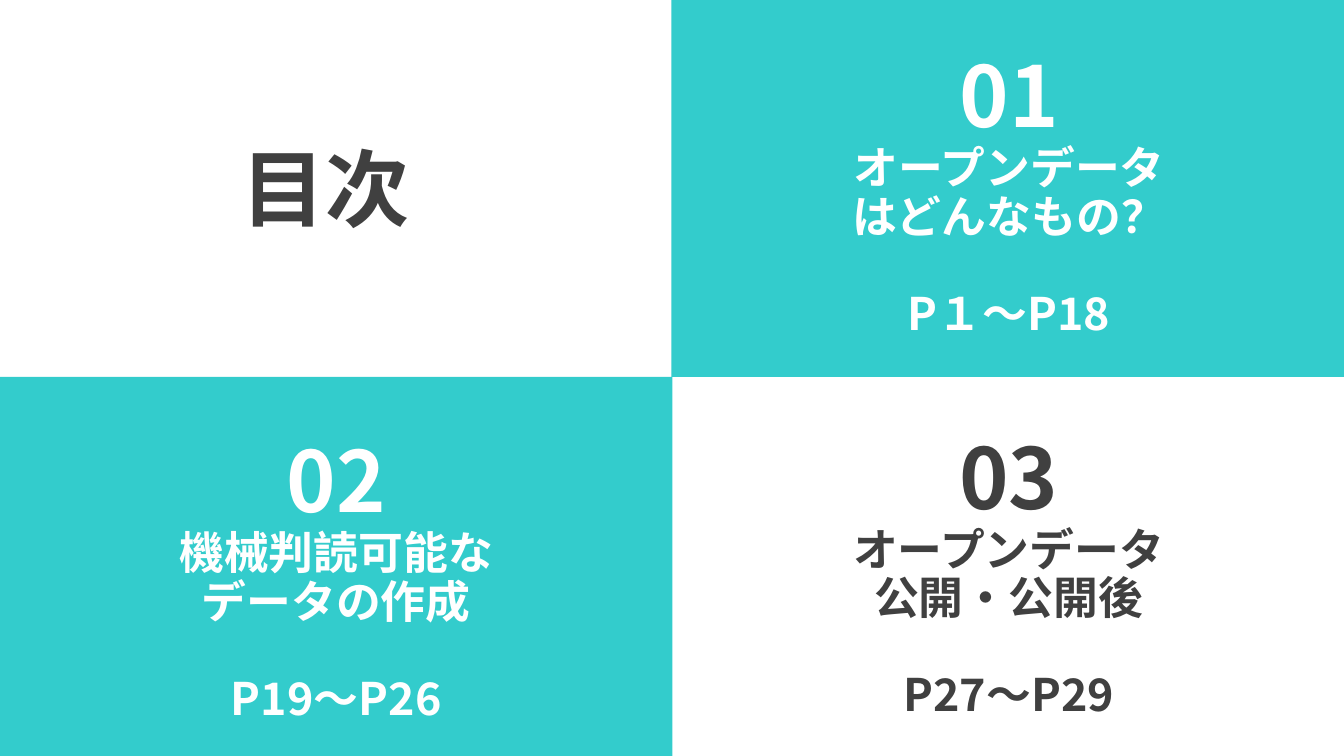
from dataclasses import dataclass

from lxml.etree import SubElement
from pptx import Presentation
from pptx.dml.color import RGBColor
from pptx.enum.shapes import MSO_SHAPE
from pptx.enum.text import MSO_ANCHOR, PP_ALIGN
from pptx.oxml.ns import qn
from pptx.util import Inches, Pt


@dataclass(frozen=True)
class Theme:
    """Colours, font and type sizes of the contents slide."""

    teal: str = "33CCCC"
    white: str = "FFFFFF"
    dark: str = "404040"
    font: str = "Noto Sans CJK JP"
    large: int = 60
    body: int = 32
    line_spacing: float = 0.9
    page_gap: float = 34.6


def write_paragraph(paragraph, text, *, theme, size, color, space_before=0):
    """Write centred bold text into a paragraph."""
    paragraph.alignment = PP_ALIGN.CENTER
    paragraph.line_spacing = theme.line_spacing
    paragraph.space_before = Pt(space_before)
    run = paragraph.add_run()
    run.text = text
    run.font.size = Pt(size)
    run.font.bold = True
    run.font.color.rgb = RGBColor.from_string(color)
    run.font.name = theme.font
    SubElement(run.font._element, qn("a:ea"), typeface=theme.font)


class ContentsSlide:
    """Draws panels and text blocks on one slide in one theme."""

    def __init__(self, slide, theme):
        """Keep the slide and its theme."""
        self.slide = slide
        self.theme = theme

    def panel(self, left, top, width, height):
        """Add a teal quarter panel."""
        shape = self.slide.shapes.add_shape(
            MSO_SHAPE.RECTANGLE, Inches(left), Inches(top), Inches(width), Inches(height)
        )
        shape.shadow.inherit = False
        shape.fill.solid()
        shape.fill.fore_color.rgb = RGBColor.from_string(self.theme.teal)
        shape.line.fill.background()

    def text_frame(self, left, top, width, height):
        """Add a wrapping, vertically centred text box and return its frame."""
        box = self.slide.shapes.add_textbox(
            Inches(left), Inches(top), Inches(width), Inches(height)
        )
        frame = box.text_frame
        frame.word_wrap = True
        frame.vertical_anchor = MSO_ANCHOR.MIDDLE
        return frame

    def heading(self, text, area):
        """Add the slide heading."""
        frame = self.text_frame(*area)
        write_paragraph(frame.paragraphs[0], text, theme=self.theme,
                        size=self.theme.large, color=self.theme.dark)

    def chapter(self, number, title_lines, pages, area, color):
        """Add a chapter number, its title lines and its page range."""
        frame = self.text_frame(*area)
        write_paragraph(frame.paragraphs[0], number, theme=self.theme,
                        size=self.theme.large, color=color)
        for line in title_lines:
            write_paragraph(frame.add_paragraph(), line, theme=self.theme,
                            size=self.theme.body, color=color)
        write_paragraph(frame.add_paragraph(), pages, theme=self.theme,
                        size=self.theme.body, color=color,
                        space_before=self.theme.page_gap)


def main():
    """Build and save the contents slide."""
    presentation = Presentation()
    presentation.slide_width = Inches(13.33)
    presentation.slide_height = Inches(7.5)
    theme = Theme()
    contents = ContentsSlide(
        presentation.slides.add_slide(presentation.slide_layouts[6]), theme
    )
    contents.panel(0, 3.74, 6.67, 3.77)
    contents.panel(6.66, 0, 6.67, 3.74)
    chapters = [
        ("01", ("オープンデータ", "はどんなもの？"), "P１～P18",
         (7.63, 0.18, 4.76, 3.56), theme.white),
        ("02", ("機械判読可能な", "データの作成"), "P19～P26",
         (1.19, 4.06, 4.29, 3.44), theme.white),
        ("03", ("オープンデータ", "公開・公開後"), "P27～P29",
         (7.86, 4.17, 4.29, 3.15), theme.dark),
    ]
    for chapter in chapters:
        contents.chapter(*chapter)
    contents.heading("目次", (1.76, 1.17, 2.94, 1.5))
    presentation.save("out.pptx")


if __name__ == "__main__":
    main()
